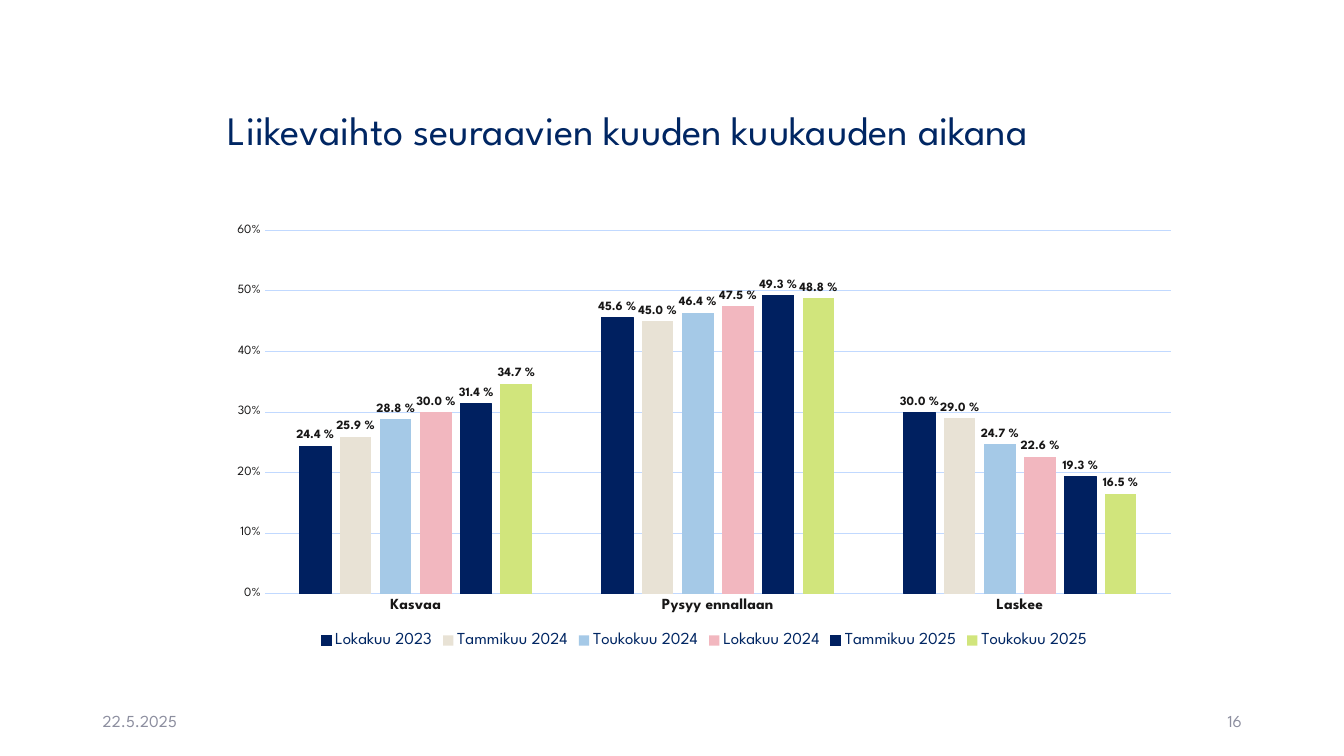
"""Build the slide on expected turnover over the next six months."""
import pptx
import pptx.chart.data
import pptx.dml.color
import pptx.enum.chart
import pptx.enum.text
import pptx.util
from pptx.util import Cm

FONT = "League Spartan"
COLORS = {
    "title": "002663",
    "label": "181717",
    "footer": "8C8E9F",
    "line": "C1D9FF",
    "navy": "002060",
    "sand": "E8E2D5",
    "sky": "A5C9E7",
    "pink": "F2B7BF",
    "lime": "D1E57C",
}
ANSWERS = ["Kasvaa", "Pysyy ennallaan", "Laskee"]
SURVEYS = [
    ("Lokakuu 2023", "navy", (0.244, 0.456, 0.3)),
    ("Tammikuu 2024", "sand", (0.259, 0.45, 0.29)),
    ("Toukokuu 2024", "sky", (0.288, 0.464, 0.247)),
    ("Lokakuu 2024", "pink", (0.3, 0.475, 0.226)),
    ("Tammikuu 2025", "navy", (0.314, 0.493, 0.193)),
    ("Toukokuu 2025", "lime", (0.347, 0.488, 0.165)),
]


def apply_format(target, values):
    """Set each attribute in values on the target."""
    for name, value in values.items():
        setattr(target, name, value)


def rgb(color):
    """Return the named color as an RGB value."""
    return pptx.dml.color.RGBColor.from_string(COLORS[color])


def format_font(font, size, color, bold=False):
    """Give a font the slide typeface, a size, a color and a weight."""
    apply_format(font, {"name": FONT, "size": pptx.util.Pt(size), "bold": bold})
    font.color.rgb = rgb(color)


def format_line(line, color):
    """Draw a thin line in the named color."""
    line.color.rgb = rgb(color)
    line.width = pptx.util.Pt(0.75)


def fill_text(shape, text, size, color, alignment, spacing):
    """Write one vertically centred paragraph into a shape."""
    frame = shape.text_frame
    apply_format(frame, {
        "text": text,
        "word_wrap": True,
        "auto_size": pptx.enum.text.MSO_AUTO_SIZE.NONE,
        "vertical_anchor": pptx.enum.text.MSO_ANCHOR.MIDDLE,
    })
    paragraph = frame.paragraphs[0]
    apply_format(paragraph, {"alignment": alignment, **spacing})
    format_font(paragraph.runs[0].font, size, color)


def add_title(slide, left, top, width, height):
    """Place the heading in the title placeholder."""
    title = slide.shapes.title
    apply_format(title, {"left": left, "top": top, "width": width, "height": height})
    fill_text(title, "Liikevaihto seuraavien kuuden kuukauden aikana", 28.8, "title",
              pptx.enum.text.PP_ALIGN.LEFT, {"line_spacing": 0.9})


def add_footer(slide, left, top, width, height):
    """Place the date and the page number at the two ends of the box."""
    field_width = Cm(7.62)
    align = pptx.enum.text.PP_ALIGN
    fields = [
        ("22.5.2025", left, align.LEFT),
        ("16", left + width - field_width, align.RIGHT),
    ]
    for text, field_left, alignment in fields:
        field = slide.shapes.add_textbox(field_left, top, field_width, height)
        fill_text(field, text, 12, "footer", alignment, {"space_after": pptx.util.Pt(6)})


def format_axes(chart):
    """Style the answer axis and the percentage axis."""
    no_tick = pptx.enum.chart.XL_TICK_MARK.NONE
    ticks = {"major_tick_mark": no_tick, "minor_tick_mark": no_tick}
    answer_axis, percent_axis = chart.category_axis, chart.value_axis
    apply_format(answer_axis, ticks)
    format_font(answer_axis.tick_labels.font, 11, "label", True)
    format_line(answer_axis.format.line, "line")
    apply_format(percent_axis, {
        **ticks, "minimum_scale": 0, "maximum_scale": 0.6, "major_unit": 0.1,
        "has_major_gridlines": True,
    })
    apply_format(percent_axis.tick_labels,
                 {"number_format": "0%", "number_format_is_linked": False})
    format_font(percent_axis.tick_labels.font, 9, "label")
    percent_axis.format.line.fill.background()
    format_line(percent_axis.major_gridlines.format.line, "line")


def format_series(series, color):
    """Color one survey's columns and label their values."""
    series.format.fill.solid()
    series.format.fill.fore_color.rgb = rgb(color)
    if color == "navy":
        format_line(series.format.line, color)
    labels = series.data_labels
    apply_format(labels, {
        "show_value": True,
        "number_format": "0.0\\ %",
        "number_format_is_linked": False,
        "position": pptx.enum.chart.XL_LABEL_POSITION.OUTSIDE_END,
    })
    format_font(labels.font, 9, "label", True)


def add_survey_chart(slide, left, top, width, height):
    """Place the clustered column chart of all surveys."""
    data = pptx.chart.data.CategoryChartData(number_format="0.0%")
    data.categories = ANSWERS
    for name, _, values in SURVEYS:
        data.add_series(name, values)
    chart = slide.shapes.add_chart(
        pptx.enum.chart.XL_CHART_TYPE.COLUMN_CLUSTERED, left, top, width, height, data).chart
    apply_format(chart, {"has_title": False, "has_legend": True})
    format_font(chart.font, 10, "title")
    apply_format(chart.legend, {
        "position": pptx.enum.chart.XL_LEGEND_POSITION.BOTTOM, "include_in_layout": False})
    format_font(chart.legend.font, 12, "title")
    plot = chart.plots[0]
    apply_format(plot, {"gap_width": 219, "overlap": -27, "vary_by_categories": False})
    format_axes(chart)
    for series, (_, color, _) in zip(plot.series, SURVEYS):
        format_series(series, color)


def main():
    """Build and save the presentation."""
    presentation = pptx.Presentation()
    apply_format(presentation, {"slide_width": Cm(33.87), "slide_height": Cm(19.05)})
    slide = presentation.slides.add_slide(presentation.slide_layouts[5])
    add_footer(slide, Cm(2.34), Cm(17.65), Cm(29.21), Cm(1.02))
    add_title(slide, Cm(5.49), Cm(1.93), Cm(26.06), Cm(2.79))
    add_survey_chart(slide, Cm(5.49), Cm(5.44), Cm(24.51), Cm(11))
    presentation.save("out.pptx")


if __name__ == "__main__":
    main()
